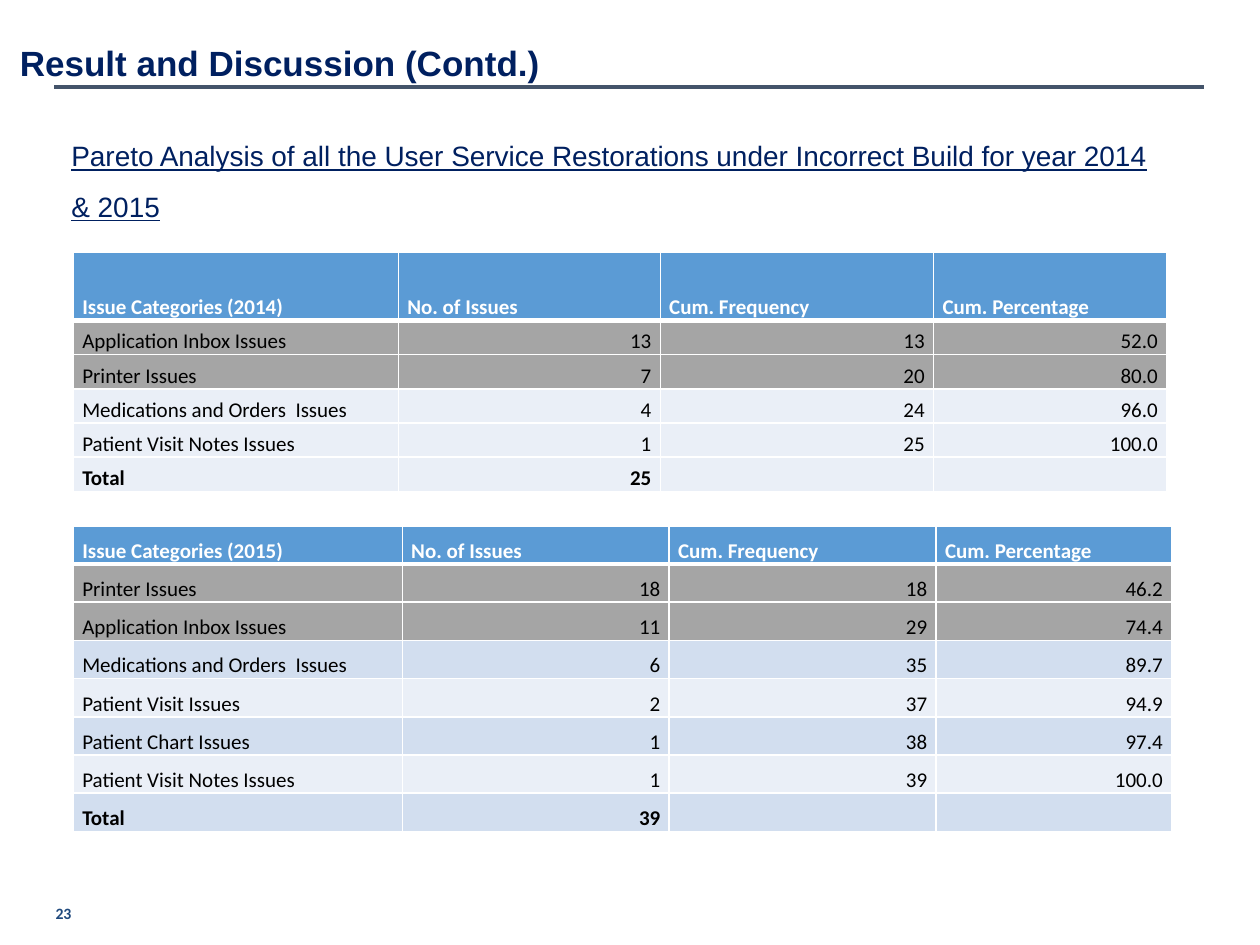
from itertools import chain, cycle

from pptx import Presentation
from pptx.dml.color import RGBColor
from pptx.enum.shapes import MSO_CONNECTOR as Connector
from pptx.enum.text import MSO_ANCHOR as Anchor, PP_ALIGN as Align
from pptx.oxml import parse_xml
from pptx.oxml.ns import nsdecls
from pptx.oxml.xmlchemy import OxmlElement
from pptx.util import Cm, Pt

NAVY, SLATE, BLUE, PAGE_BLUE = "002060", "44546A", "5B9BD5", "1F497D"
GREY, PALE, SOFT, WHITE, BLACK = "A5A5A5", "EAEFF7", "D2DEEF", "FFFFFF", "000000"
HEADINGS = ["No. of Issues", "Cum. Frequency", "Cum. Percentage"]
ISSUES_2014 = [
    ["Issue Categories (2014)", *HEADINGS],
    ["Application Inbox Issues", "13", "13", "52.0"],
    ["Printer Issues", "7", "20", "80.0"],
    ["Medications and Orders  Issues", "4", "24", "96.0"],
    ["Patient Visit Notes Issues", "1", "25", "100.0"],
    ["Total", "25", "", ""],
]
ISSUES_2015 = [
    ["Issue Categories (2015)", *HEADINGS],
    ["Printer Issues", "18", "18", "46.2"],
    ["Application Inbox Issues", "11", "29", "74.4"],
    ["Medications and Orders  Issues", "6", "35", "89.7"],
    ["Patient Visit Issues", "2", "37", "94.9"],
    ["Patient Chart Issues", "1", "38", "97.4"],
    ["Patient Visit Notes Issues", "1", "39", "100.0"],
    ["Total", "39", "", ""],
]


def colour(value):
    return RGBColor.from_string(value)


def assign(target, values):
    for name, value in values.items():
        setattr(target, name, value)


class SlideBuilder:
    """Draws styled text, rules and issue tables on the current page."""

    cell_format = dict(vertical_anchor=Anchor.BOTTOM, margin_left=Cm(0.18),
                       margin_right=Cm(0.18), margin_top=0, margin_bottom=0)

    def __init__(self, page):
        self.page = page

    def fill_text(self, frame, text, fill, para_format, **font):
        para = frame.paragraphs[0]
        assign(para, para_format)
        if text:
            span = para.add_run()
            span.text = text
            assign(span.font, font)
            span.font.color.rgb = colour(fill)
        else:
            end = OxmlElement("a:endParaRPr")
            end.set("sz", str(font["size"].centipoints))
            para._p.append(end)

    def text(self, area, text, fill, para_format, frame_format, **font):
        box = self.page.shapes.add_textbox(*map(Cm, area))
        assign(box.text_frame, dict(word_wrap=True, **frame_format))
        self.fill_text(box.text_frame, text, fill, para_format, **font)

    def rule(self, left, right, top, fill, width):
        line = self.page.shapes.add_connector(
            Connector.STRAIGHT, Cm(left), Cm(top), Cm(right), Cm(top))
        line.line.color.rgb = colour(fill)
        line.line.width = Pt(width)
        line._element.spPr.append(OxmlElement("a:effectLst"))

    def borders(self, cell, top, bottom):
        properties = cell._tc.get_or_add_tcPr()
        for side, width in dict(L=1, R=1, T=top, B=bottom).items():
            properties.append(parse_xml(
                f'<a:ln{side} {nsdecls("a")} w="{Pt(width)}"><a:solidFill>'
                f'<a:srgbClr val="{WHITE}"/></a:solidFill></a:ln{side}>'))

    def table(self, left, top, widths, heights, rows, bands):
        table = self.page.shapes.add_table(
            len(rows), len(widths), Cm(left), Cm(top),
            Cm(sum(widths)), Cm(sum(heights))).table
        assign(table, dict(first_row=False, horz_banding=False))
        for column, width in zip(table.columns, widths):
            column.width = Cm(width)
        fills = chain([BLUE, GREY, GREY], cycle(bands))
        for r, (values, height, fill) in enumerate(zip(rows, heights, fills)):
            table.rows[r].height = Cm(height)
            header = r == 0
            for c, value in enumerate(values):
                cell = table.cell(r, c)
                assign(cell, self.cell_format)
                self.borders(cell, 3 if r == 1 else 1, 3 if header else 1)
                cell.fill.solid()
                cell.fill.fore_color.rgb = colour(fill)
                align = Align.LEFT if header or c == 0 else Align.RIGHT
                self.fill_text(cell.text_frame, value, WHITE if header else BLACK,
                               dict(alignment=align, line_spacing=1.15),
                               name="Calibri", size=Pt(12),
                               bold=header or values[0] == "Total")


def main():
    deck = Presentation()
    assign(deck, dict(slide_width=Cm(25.4), slide_height=Cm(19.05)))
    builder = SlideBuilder(deck.slides.add_slide(deck.slide_layouts[6]))
    builder.rule(1.09, 24.28, 1.75, SLATE, 2.25)
    builder.text((1.12, 18.21, 0.84, 0.41), "23", PAGE_BLUE,
                 dict(line_spacing=Pt(10.8)),
                 dict(margin_left=0, margin_right=0, margin_top=0, margin_bottom=0),
                 name="Calibri", size=Pt(9), bold=True)
    builder.text((0, 0.7, 23.47, 1.22), "Result and Discussion (Contd.)", NAVY,
                 dict(line_spacing=0.9),
                 dict(margin_left=Cm(0.4), vertical_anchor=Anchor.MIDDLE),
                 name="Arial", size=Pt(20), bold=True)
    builder.text((1.19, 2.34, 22.43, 5.46),
                 "Pareto Analysis of all the User Service Restorations "
                 "under Incorrect Build for year 2014 & 2015",
                 NAVY, dict(line_spacing=1.5), {},
                 name="Arial", size=Pt(16), underline=True)
    builder.table(1.48, 5.09, [6.55, 5.28, 5.51, 4.7], [1.37] + [0.69] * 5,
                  ISSUES_2014, [PALE])
    builder.table(1.48, 10.6, [6.63, 5.38, 5.38, 4.75], [0.77] * 8,
                  ISSUES_2015, [SOFT, PALE])
    deck.save("out.pptx")


if __name__ == "__main__":
    main()
